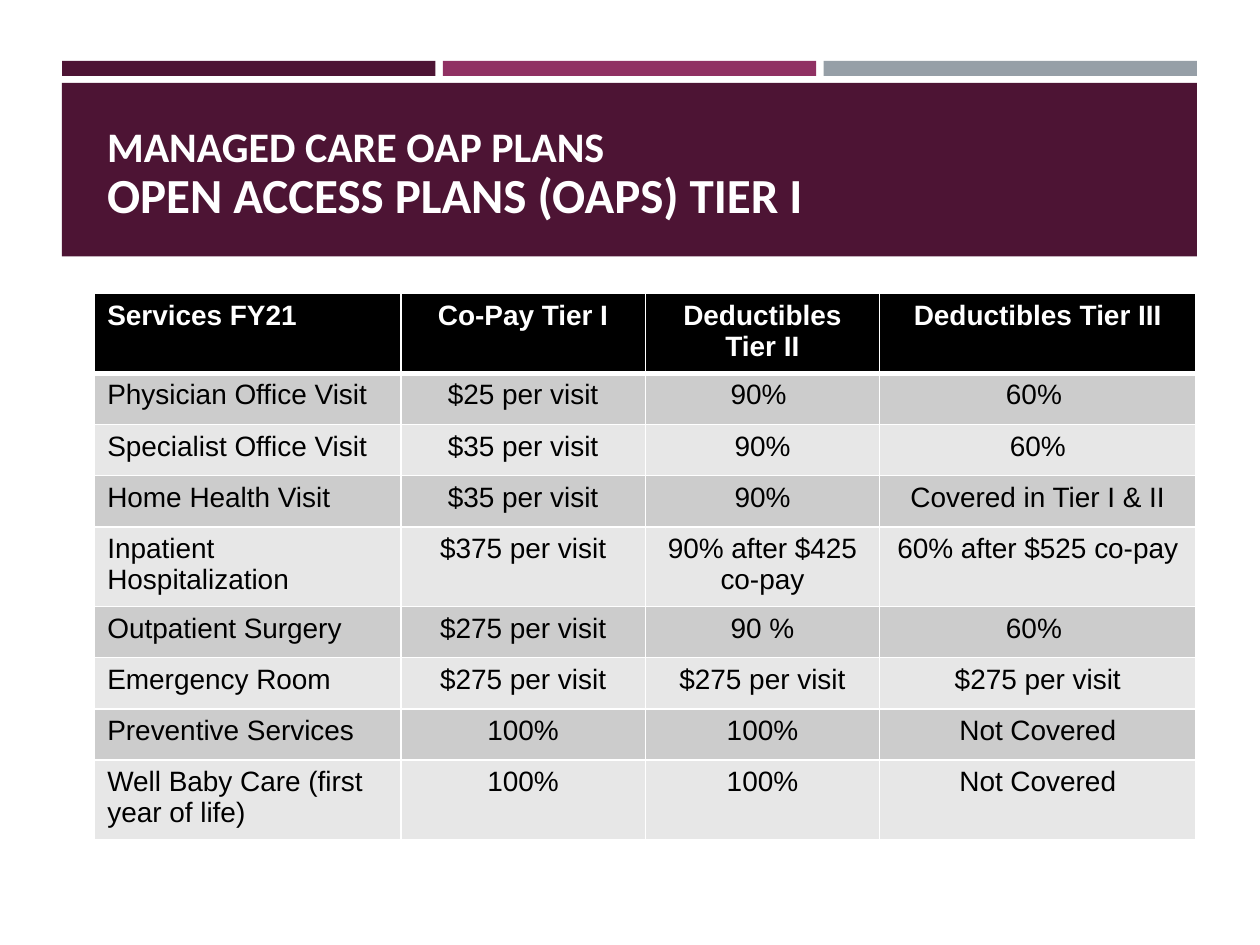
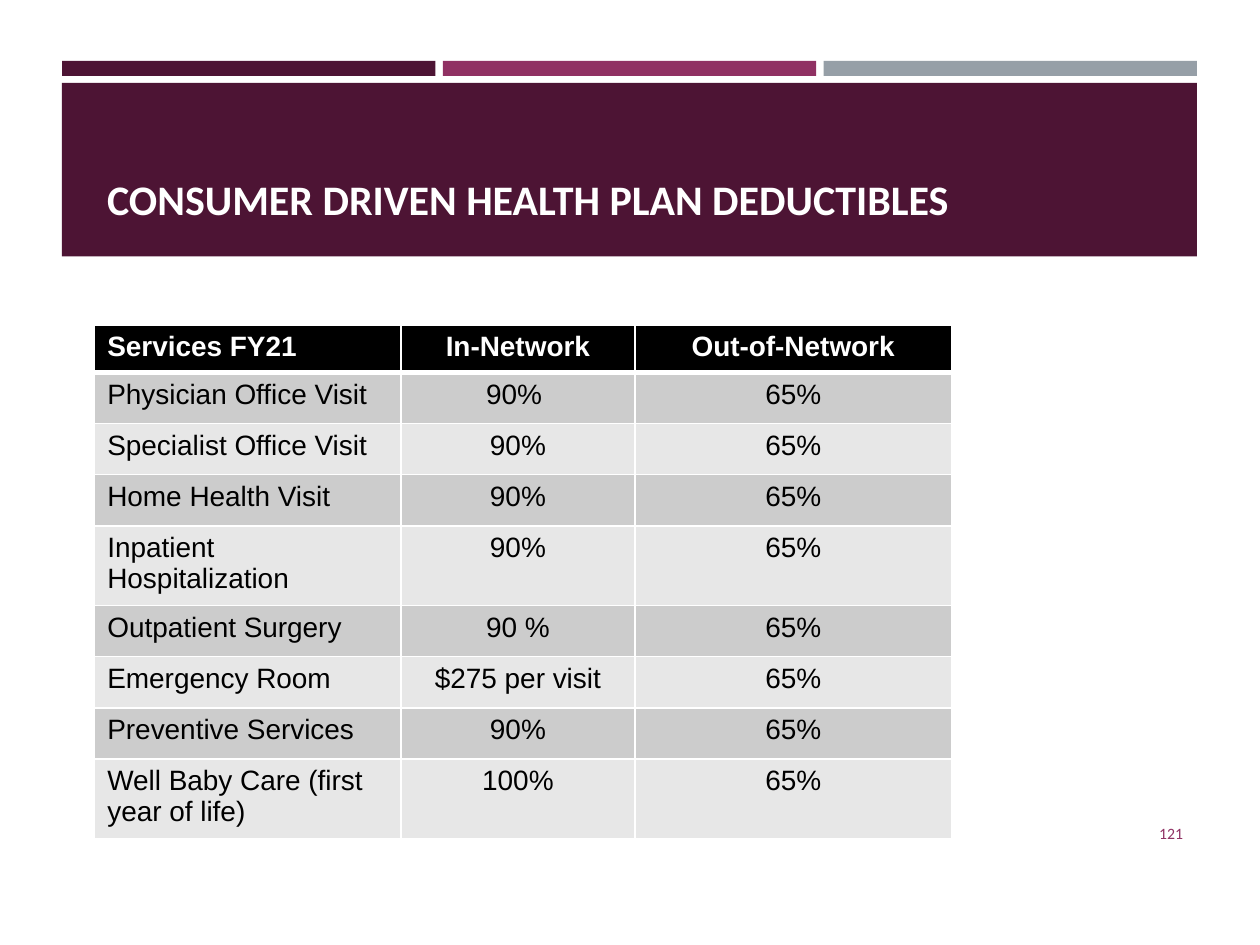
"""Builds two slides that compare health plan deductibles in tables."""
from lxml import etree
from pptx import Presentation
from pptx.dml.color import RGBColor
from pptx.enum.shapes import MSO_SHAPE
from pptx.enum.text import MSO_ANCHOR, PP_ALIGN
from pptx.oxml.ns import qn
from pptx.util import Cm, Pt

RECT = MSO_SHAPE.RECTANGLE
LOW, MID = MSO_ANCHOR.BOTTOM, MSO_ANCHOR.MIDDLE
LEFT, CENTER, RIGHT = PP_ALIGN.LEFT, PP_ALIGN.CENTER, PP_ALIGN.RIGHT

HUES = {
    "plum": "4D1434", "rose": "903163", "slate": "969FA7", "white": "FFFFFF",
    "black": "000000", "dark": "CCCCCC", "light": "E7E7E7",
}
HEAD, BODY = "Calibri", "Arial"
BANDS = ["plum", "rose", "slate"]
EDGE, SPAN, GAP = 1.25, 22.88, 0.15
INSET = 1.91
ROW = 1.03

SERVICES = [
    "Physician Office Visit", "Specialist Office Visit", "Home Health Visit",
    "Inpatient Hospitalization", "Outpatient Surgery", "Emergency Room",
    "Preventive Services", "Well Baby Care (first year of life)",
]
SLIDES = [
    {
        "title": [("MANAGED CARE OAP PLANS", 24),
                  ("OPEN ACCESS PLANS (OAPS) TIER I", 28)],
        "page": "117",
        "top": 5.92,
        "first": ROW,
        "cols": [
            ("Co-Pay Tier I", 4.93,
             ["$25 per visit", "$35 per visit", "$35 per visit", "$375 per visit",
              "$275 per visit", "$275 per visit", "100%", "100%"]),
            ("Deductibles Tier II", 4.72,
             ["90% ", "90%", "90%", "90% after $425 co-pay",
              "90 %", "$275 per visit", "100%", "100%"]),
            ("Deductibles Tier III", 6.38,
             ["60% ", "60%", "Covered in Tier I & II", "60% after $525 co-pay",
              "60% ", "$275 per visit", "Not Covered", "Not Covered"]),
        ],
    },
    {
        "title": [("CONSUMER DRIVEN HEALTH PLAN DEDUCTIBLES", 24)],
        "page": "121",
        "top": 6.55,
        "first": 0.96,
        "cols": [
            ("In-Network", 4.72,
             ["90% ", "90%", "90%", "90%", "90 %", "$275 per visit", "90%", "100%"]),
            ("Out-of-Network", 6.38, ["65%"] * len(SERVICES)),
        ],
    },
]


def hue(name):
    return RGBColor.from_string(HUES[name])


def add_run(para, text, size, font, color, bold=False):
    run = para.add_run()
    run.text = text
    run.font.size = Pt(size)
    run.font.name = font
    run.font.bold = bold
    run.font.color.rgb = hue(color)


def add_bar(slide, left, top, width, height, color):
    bar = slide.shapes.add_shape(RECT, Cm(left), Cm(top), Cm(width), Cm(height))
    bar.shadow.inherit = False
    bar.fill.solid()
    bar.fill.fore_color.rgb = hue(color)
    bar.line.fill.background()


def add_box(slide, left, top, width, height, anchor):
    box = slide.shapes.add_textbox(Cm(left), Cm(top), Cm(width), Cm(height))
    frame = box.text_frame
    frame.word_wrap = True
    frame.vertical_anchor = anchor
    return frame.paragraphs[0]


def add_frame(slide, title, page):
    width = (SPAN - GAP * (len(BANDS) - 1)) / len(BANDS)
    for i, color in enumerate(BANDS):
        add_bar(slide, EDGE + i * (width + GAP), 1.23, width, 0.3, color)
    add_bar(slide, EDGE, 1.67, SPAN, 3.5, "plum")
    para = add_box(slide, INSET, 1.65, 22.2, 3, LOW)
    para.line_spacing = 0.9
    for i, (text, size) in enumerate(title):
        if i:
            para.add_line_break()
        add_run(para, text, size, HEAD, "white", True)
    para = add_box(slide, 21.97, 16.28, 2.13, 1.02, MID)
    para.alignment = RIGHT
    add_run(para, page, 9, HEAD, "rose")


def set_edges(cell, row):
    props = cell._tc.get_or_add_tcPr()
    wide = {("B", 0), ("T", 1)}
    for i, side in enumerate("LRTB"):
        size = Pt(3 if (side, row) in wide else 1)
        line = etree.Element(qn(f"a:ln{side}"), w=str(size))
        fill = etree.SubElement(line, qn("a:solidFill"))
        etree.SubElement(fill, qn("a:srgbClr"), val=HUES["white"])
        props.insert(i, line)


def add_grid(slide, top, first, cols):
    cols = [("Services FY21", 6.17, SERVICES)] + cols
    count = len(SERVICES) + 1
    total = sum(width for _, width, _ in cols)
    table = slide.shapes.add_table(
        count, len(cols), Cm(INSET), Cm(top), Cm(total),
        Cm(first + ROW * len(SERVICES))).table
    for r in range(count):
        table.rows[r].height = Cm(ROW if r else first)
    for c, (label, width, items) in enumerate(cols):
        table.columns[c].width = Cm(width)
        for r, text in enumerate([label] + items):
            cell = table.cell(r, c)
            cell.fill.solid()
            shade = ("dark" if r % 2 else "light") if r else "black"
            cell.fill.fore_color.rgb = hue(shade)
            set_edges(cell, r)
            para = cell.text_frame.paragraphs[0]
            para.alignment = CENTER if c else LEFT
            add_run(para, text, 16, BODY, "black" if r else "white", r == 0)


def main():
    deck = Presentation()
    deck.slide_width, deck.slide_height = Cm(25.4), Cm(19.05)
    for part in SLIDES:
        slide = deck.slides.add_slide(deck.slide_layouts[6])
        add_frame(slide, part["title"], part["page"])
        add_grid(slide, part["top"], part["first"], part["cols"])
    deck.save("out.pptx")


if __name__ == "__main__":
    main()
